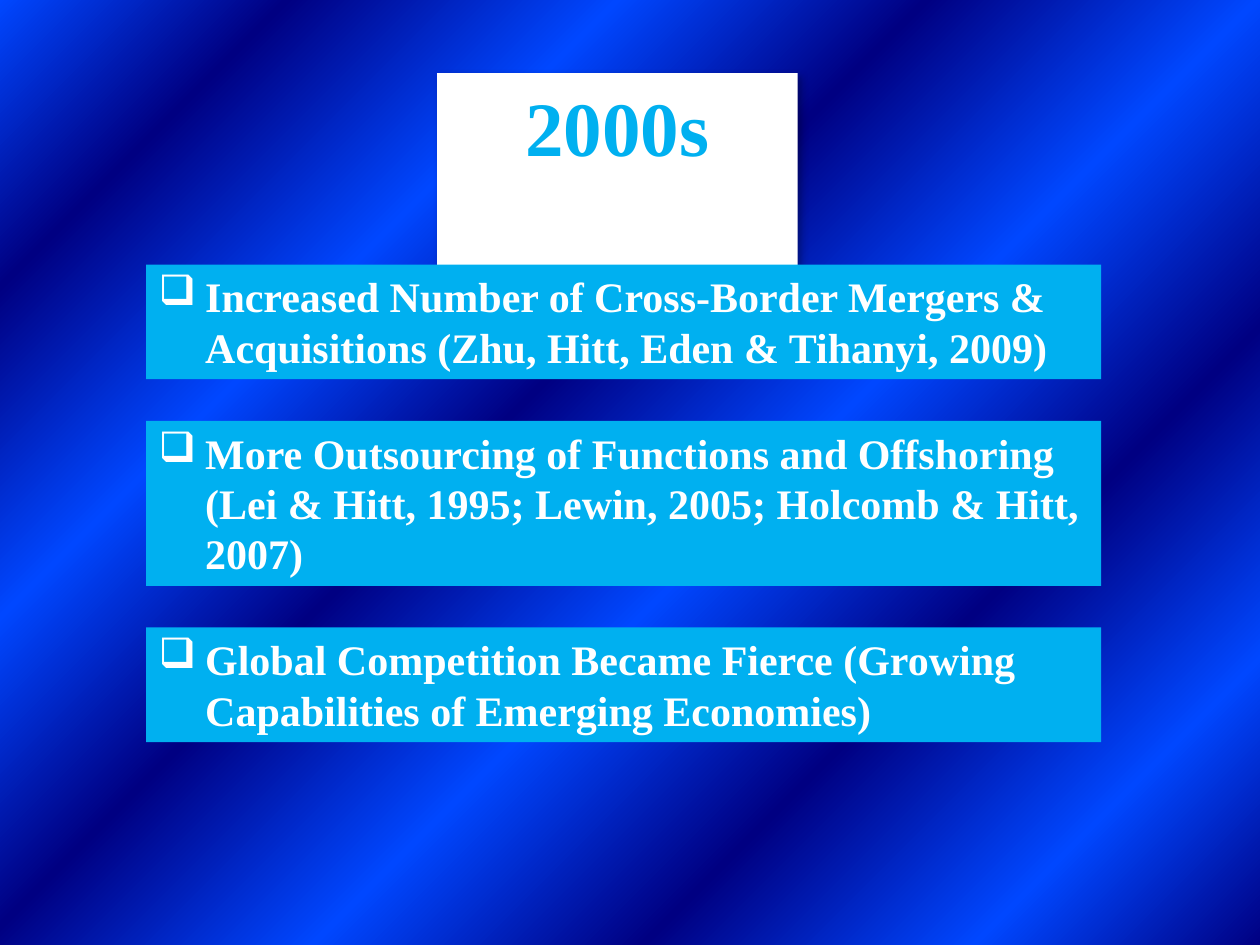
from lxml import etree
from pptx import Presentation
from pptx.dml.color import RGBColor
from pptx.enum.text import MSO_ANCHOR, MSO_AUTO_SIZE, PP_ALIGN
from pptx.oxml.ns import qn
from pptx.util import Inches, Pt

TOP = MSO_ANCHOR.TOP
GROW = MSO_AUTO_SIZE.SHAPE_TO_FIT_TEXT
CENTER, LEFT = PP_ALIGN.CENTER, PP_ALIGN.LEFT

COLORS = {
    "navy": "000082",
    "blue": "0047FF",
    "sky": "00B0F0",
    "white": "FFFFFF",
    "shadow": "000000",
}
STRIPE_STOPS = (0, 13, 28, 43, 58, 72, 87, 100)
FRAME_FORMAT = {"word_wrap": True, "auto_size": GROW, "vertical_anchor": TOP}
FONT_FORMAT = {"name": "Times New Roman", "bold": True}

TRENDS = (
    ("Increased Number of Cross-Border Mergers & Acquisitions "
     "(Zhu, Hitt, Eden & Tihanyi, 2009)", 0.91),
    ("More Outsourcing of Functions and Offshoring "
     "(Lei & Hitt, 1995; Lewin, 2005; Holcomb & Hitt, 2007)", 1.31),
    ("Global Competition Became Fierce "
     "(Growing Capabilities of Emerging Economies)", 0.91),
)
TREND_GAP = 0.33
BULLET_INDENT = Inches(0.37)


def set_attributes(target, values):
    for name, value in values.items():
        setattr(target, name, value)


def add_element(parent, tag, **attributes):
    element = etree.SubElement(parent, qn(tag))
    for name, value in attributes.items():
        element.set(name, str(value))
    return element


def paint_background(slide):
    fill = slide.background.fill
    fill.gradient()
    fill.gradient_angle = 135
    stops = next(slide.element.iter(qn("a:gsLst")))
    for stop in list(stops):
        stops.remove(stop)
    for index, position in enumerate(STRIPE_STOPS):
        stop = add_element(stops, "a:gs", pos=position * 1000)
        color = COLORS["blue" if index % 2 else "navy"]
        add_element(stop, "a:srgbClr", val=color)


def place_panel(panel, box, fill_color):
    left, top, width, height = (Inches(length) for length in box)
    set_attributes(panel, {"left": left, "top": top, "width": width, "height": height})
    panel.fill.solid()
    panel.fill.fore_color.rgb = RGBColor.from_string(COLORS[fill_color])
    panel.line.fill.background()
    set_attributes(panel.text_frame, FRAME_FORMAT)


def write_text(paragraph, text, size, color, alignment):
    paragraph.text = text
    set_attributes(paragraph, {"alignment": alignment, "space_before": Pt(0)})
    font = paragraph.runs[0].font
    set_attributes(font, {**FONT_FORMAT, "size": Pt(size)})
    font.color.rgb = RGBColor.from_string(COLORS[color])


def place_title(slide, box):
    title = slide.shapes.title
    place_panel(title, box, "white")
    write_text(title.text_frame.paragraphs[0], "2000s", 44, "sky", CENTER)
    effects = add_element(title.element.spPr, "a:effectLst")
    shadow = add_element(effects, "a:outerShdw", blurRad=Pt(4.5), dist=Pt(2.6),
                         dir=53 * 60000, algn="tl", rotWithShape=0)
    tint = add_element(shadow, "a:srgbClr", val=COLORS["shadow"])
    add_element(tint, "a:alpha", val=30000)


def add_trend(slide, box, text):
    trend = slide.shapes.add_textbox(0, 0, 0, 0)
    place_panel(trend, box, "sky")
    paragraph = trend.text_frame.paragraphs[0]
    properties = paragraph._p.get_or_add_pPr()
    properties.set("marL", str(BULLET_INDENT))
    properties.set("indent", str(-BULLET_INDENT))
    add_element(properties, "a:buChar", char="❑")
    write_text(paragraph, text, 24, "white", LEFT)


def add_trends(slide, left, top, width):
    for text, height in TRENDS:
        add_trend(slide, (left, top, width, height), text)
        top += height + TREND_GAP


def main():
    presentation = Presentation()
    set_attributes(presentation, {"slide_width": Inches(10), "slide_height": Inches(7.5)})
    slide = presentation.slides.add_slide(presentation.slide_layouts[5])
    paint_background(slide)
    place_title(slide, (3.47, 0.58, 2.86, 0.84))
    add_trends(slide, 1.16, 2.1, 7.58)
    presentation.save("out.pptx")


if __name__ == "__main__":
    main()
